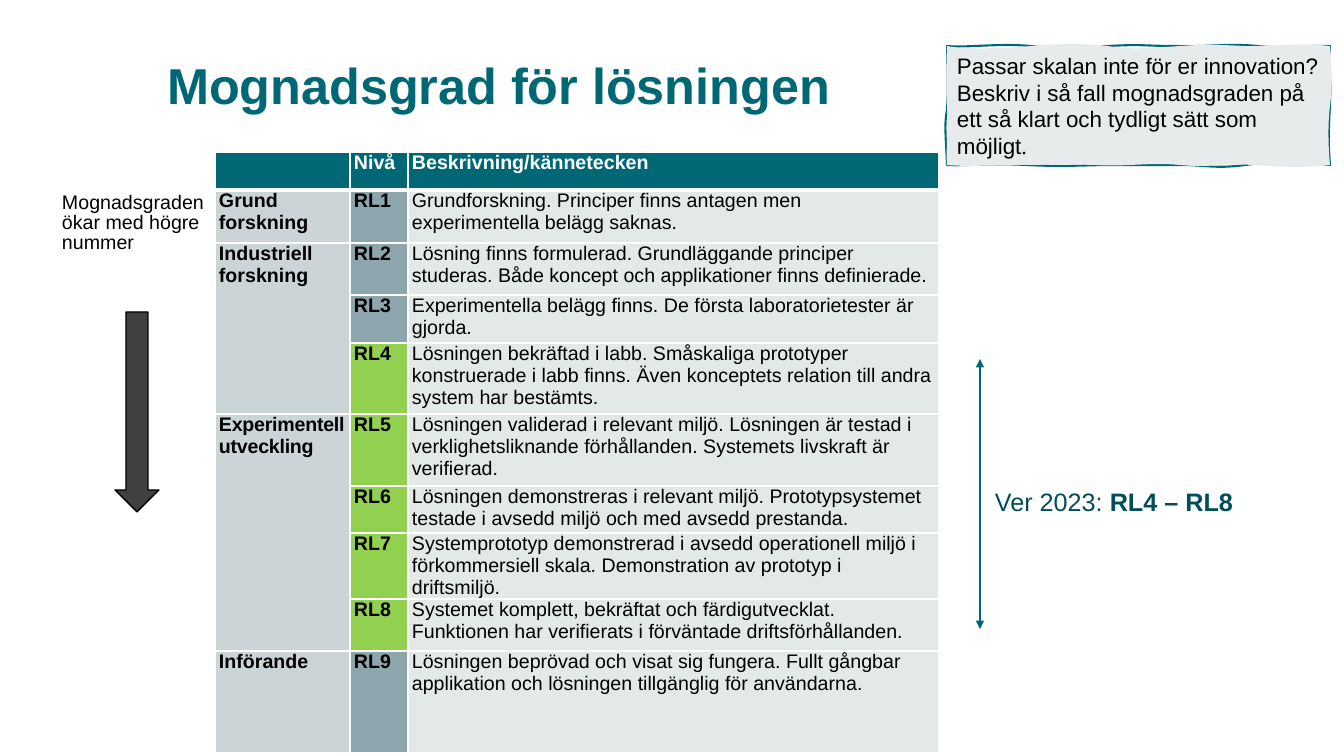
from lxml.etree import SubElement
from pptx import Presentation
from pptx.dml.color import RGBColor
from pptx.enum.shapes import MSO_CONNECTOR, MSO_SHAPE
from pptx.enum.text import MSO_ANCHOR, PP_ALIGN
from pptx.oxml.ns import qn
from pptx.util import Pt

EMU_PER_PX = 12192000 / 1344
TEAL, DARK_TEAL, BLACK, WHITE = "006875", "004E58", "000000", "FFFFFF"
STAGE_FILL, LEVEL_FILL, TEXT_FILL, GREEN = "CBD4D6", "8DA6AD", "E3E8E9", "92D050"

COLUMN_WIDTHS = [157, 135, 58, 531]
ROW_HEIGHTS = [38, 53, 52, 48, 71, 72, 47, 66, 52, 101]
STAGES = [("Grund forskning", 1), ("Industriell forskning", 3),
          ("Experimentell utveckling", 4), ("Införande", 1)]
DESCRIPTIONS = [
    "Grundforskning. Principer finns antagen men experimentella belägg saknas.",
    "Lösning finns formulerad. Grundläggande principer studeras. Både koncept och applikationer finns definierade.",
    "Experimentella belägg finns. De första laboratorietester är gjorda.",
    "Lösningen bekräftad i labb. Småskaliga prototyper konstruerade i labb finns. "
    "Även konceptets relation till andra system har bestämts.",
    "Lösningen validerad i relevant miljö. Lösningen är testad i verklighetsliknande förhållanden. "
    "Systemets livskraft är verifierad.",
    "Lösningen demonstreras i relevant miljö. Prototypsystemet testade i avsedd miljö och med avsedd prestanda.",
    "Systemprototyp demonstrerad i avsedd operationell miljö i förkommersiell skala. "
    "Demonstration av prototyp i driftsmiljö.",
    "Systemet komplett, bekräftat och färdigutvecklat. Funktionen har verifierats i förväntade driftsförhållanden.",
    "Lösningen beprövad och visat sig fungera. Fullt gångbar applikation och lösningen tillgänglig för användarna.",
]

# Both wavy outlines start at the frame's top left corner; each tuple is one cubic curve.
FRAME_BOX = (947, 46, 383, 119)
FRAME_LINE = [
    (965, 48, 998, 43, 1031, 46), (1063, 49, 1069, 48, 1108, 46),
    (1145, 44, 1142, 46, 1176, 46), (1211, 47, 1229, 43, 1257, 46),
    (1285, 49, 1307, 45, 1330, 46), (1329, 71, 1331, 78, 1330, 103),
    (1329, 127, 1328, 140, 1330, 165), (1288, 161, 1276, 161, 1245, 165),
    (1215, 169, 1207, 165, 1180, 165), (1154, 165, 1138, 165, 1111, 165),
    (1085, 165, 1065, 167, 1027, 165), (988, 163, 967, 166, 947, 165),
    (946, 137, 944, 125, 947, 110), (948, 95, 948, 70, 947, 46)]
FRAME_FILL = [
    (965, 50, 1013, 48, 1031, 46), (1048, 44, 1087, 43, 1108, 46),
    (1128, 50, 1152, 48, 1180, 46), (1209, 44, 1223, 45, 1245, 46),
    (1268, 47, 1296, 42, 1330, 46), (1332, 62, 1332, 92, 1330, 106),
    (1328, 120, 1328, 145, 1330, 165), (1302, 168, 1283, 167, 1253, 165),
    (1223, 163, 1210, 168, 1180, 165), (1151, 162, 1125, 167, 1096, 165),
    (1067, 164, 1037, 165, 1012, 165), (986, 165, 971, 167, 947, 165),
    (946, 152, 948, 122, 947, 106), (946, 90, 947, 59, 947, 46)]


def px(*lengths):
    return [round(length * EMU_PER_PX) for length in lengths]


def color(hex_string):
    return RGBColor.from_string(hex_string)


class SlideBuilder:
    font_name = "Arial"

    def __init__(self, slide):
        self.slide = slide
        self.shapes = slide.shapes

    def add_run(self, paragraph, text, size, hex_color, bold=False, font_name=None):
        run = paragraph.add_run()
        run.text = text
        run.font.name = font_name or self.font_name
        run.font.size = Pt(size)
        run.font.bold = bold
        run.font.color.rgb = color(hex_color)
        return run

    def title(self, box, text):
        title = self.shapes.title
        title.left, title.top, title.width, title.height = px(*box)
        title.text_frame.vertical_anchor = MSO_ANCHOR.TOP
        paragraph = title.text_frame.paragraphs[0]
        paragraph.alignment = PP_ALIGN.LEFT
        paragraph.line_spacing = 0.9
        self.add_run(paragraph, text, 36, TEAL, bold=True)

    def text(self, box, runs, size, hex_color):
        text_frame = self.shapes.add_textbox(*px(*box)).text_frame
        text_frame.word_wrap = True
        for run_text, bold in runs:
            self.add_run(text_frame.paragraphs[0], run_text, size, hex_color, bold)

    def paint(self, shape, fill, line, width):
        shape.shadow.inherit = False
        shape.fill.solid()
        shape.fill.fore_color.rgb = color(fill)
        shape.line.color.rgb = color(line)
        shape.line.width = Pt(width)

    def down_arrow(self, box, fill, line):
        self.paint(self.shapes.add_shape(MSO_SHAPE.DOWN_ARROW, *px(*box)), fill, line, 1)

    def double_arrow(self, start, end, hex_color):
        arrow = self.shapes.add_connector(MSO_CONNECTOR.STRAIGHT, *px(*start, *end))
        arrow.line.color.rgb = color(hex_color)
        arrow.line.width = Pt(1.5)
        for tag in ("a:headEnd", "a:tailEnd"):
            SubElement(arrow.line._get_or_add_ln(), qn(tag), type="triangle")
        SubElement(arrow._element.spPr, qn("a:effectLst"))

    def wavy_frame(self):
        """Add a freeform whose outline and fill follow separate chains of curves."""
        left, top, width, height = FRAME_BOX
        builder = self.shapes.build_freeform(left, top, scale=EMU_PER_PX)
        builder.add_line_segments([(left + width, top), (left + width, top + height), (left, top + height)])
        frame = builder.convert_to_shape()
        outlines = frame._element.spPr.find(qn("a:custGeom")).find(qn("a:pathLst"))
        outlines.clear()
        for curves, hidden_part in ((FRAME_LINE, {"fill": "none"}), (FRAME_FILL, {"stroke": "0"})):
            outline = SubElement(outlines, qn("a:path"), w=str(width), h=str(height), **hidden_part)
            SubElement(SubElement(outline, qn("a:moveTo")), qn("a:pt"), x="0", y="0")
            for curve in curves:
                bezier = SubElement(outline, qn("a:cubicBezTo"))
                for x, y in zip(curve[::2], curve[1::2]):
                    SubElement(bezier, qn("a:pt"), x=str(x - left), y=str(y - top))
            SubElement(outline, qn("a:close"))
        return frame

    def callout(self, paragraphs):
        """Draw the wavy frame around paragraphs of (text, font) runs."""
        frame = self.wavy_frame()
        self.paint(frame, "E7EBEC", TEAL, 1.5)
        text_frame = frame.text_frame
        text_frame.word_wrap = True
        text_frame.vertical_anchor = MSO_ANCHOR.MIDDLE
        for index, runs in enumerate(paragraphs):
            paragraph = text_frame.add_paragraph() if index else text_frame.paragraphs[0]
            paragraph.alignment = PP_ALIGN.LEFT
            for text, font_name in runs:
                self.add_run(paragraph, text, 16, BLACK, font_name=font_name)

    def table(self, left, top, widths, heights):
        table = self.shapes.add_table(
            len(heights), len(widths), *px(left, top, sum(widths), sum(heights))).table
        table.first_row = table.horz_banding = False
        for column, width in zip(table.columns, px(*widths)):
            column.width = width
        for row_index, (row, height) in enumerate(zip(table.rows, px(*heights))):
            row.height = height
            for cell in row.cells:
                cell.margin_left = cell.margin_right = px(4)[0]
                cell.margin_top = cell.margin_bottom = 0
                cell.fill.background()
                self.borders(cell, top=3 if row_index == 1 else 2.25,
                             bottom=3 if row_index == 0 else 2.25)
        return table

    def borders(self, cell, top, bottom):
        properties = cell._tc.get_or_add_tcPr()
        sides = (("a:lnL", 2.25), ("a:lnR", 2.25), ("a:lnT", top), ("a:lnB", bottom))
        for position, (tag, width) in enumerate(sides):
            line = SubElement(properties, qn(tag), w=str(Pt(width)))
            SubElement(SubElement(line, qn("a:solidFill")), qn("a:srgbClr"), val=WHITE)
            properties.insert(position, line)

    def cell(self, cell, text, fill=None, hex_color=BLACK, bold=True):
        if fill:
            cell.fill.solid()
            cell.fill.fore_color.rgb = color(fill)
        if text:
            return self.add_run(cell.text_frame.paragraphs[0], text, 14, hex_color, bold)


def add_maturity_table(builder):
    table = builder.table(58, 152, COLUMN_WIDTHS, ROW_HEIGHTS)
    note = table.cell(0, 0)
    note.merge(table.cell(len(ROW_HEIGHTS) - 1, 0))
    note.margin_top = px(41)[0]
    builder.cell(note, "Mognadsgraden ökar med högre nummer", bold=False)
    note.text_frame.paragraphs[0].line_spacing = Pt(14.5)

    for column, heading in enumerate(("", "Nivå", "Beskrivning/kännetecken"), start=1):
        builder.cell(table.cell(0, column), heading, TEAL, WHITE)
    row = 1
    for stage, levels in STAGES:
        stage_cell = table.cell(row, 1)
        if levels > 1:
            stage_cell.merge(table.cell(row + levels - 1, 1))
        run = builder.cell(stage_cell, stage, STAGE_FILL)
        if stage.startswith("Experimentell"):
            run.font._element.set("spc", "-20")
        row += levels
    for level, description in enumerate(DESCRIPTIONS, start=1):
        builder.cell(table.cell(level, 2), f"RL{level}", GREEN if 4 <= level <= 8 else LEVEL_FILL)
        builder.cell(table.cell(level, 3), description, TEXT_FILL, bold=False)


def main():
    presentation = Presentation()
    presentation.slide_width, presentation.slide_height = px(1344, 756)
    builder = SlideBuilder(presentation.slides.add_slide(presentation.slide_layouts[5]))
    builder.title((157, 56, 1144, 77), "Mognadsgrad för lösningen")
    add_maturity_table(builder)
    builder.double_arrow((980, 359), (980, 629), TEAL)
    builder.text((985, 481, 291, 40), [("Ver 2023: ", False), ("RL4 – RL8", True)], 18, DARK_TEAL)
    builder.down_arrow((115, 312, 44, 200), "404040", BLACK)
    builder.callout([
        [("Passar skalan inte för er innovation?", None)],
        [("Beskriv i så fall mognadsgraden på ett så klart och tydligt sätt som möjligt", None),
         (".", "Times New Roman")]])
    presentation.save("out.pptx")


if __name__ == "__main__":
    main()
